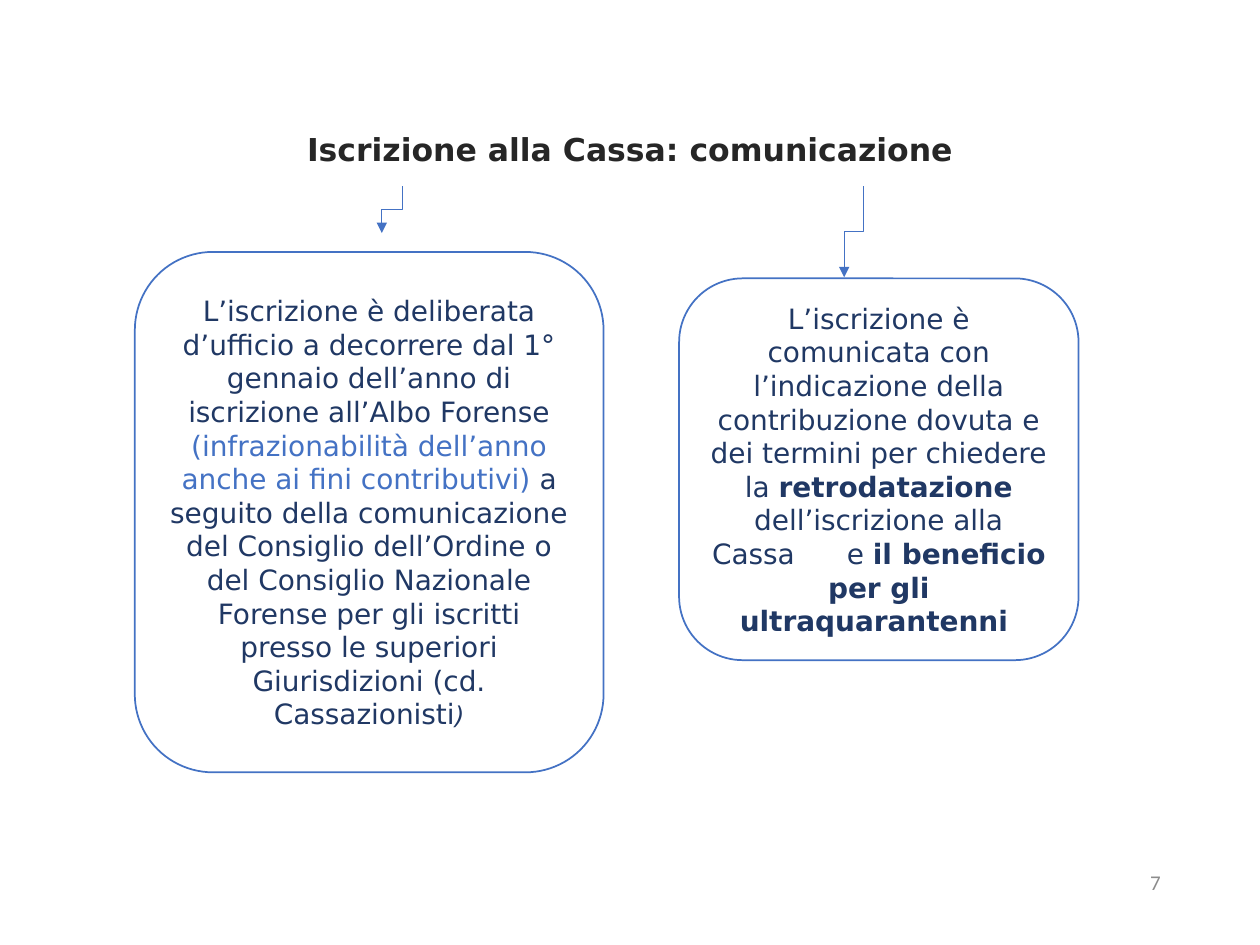
from lxml.etree import SubElement
from pptx import Presentation
from pptx.dml.color import RGBColor
from pptx.enum.shapes import MSO_CONNECTOR as Link, MSO_SHAPE as Shape
from pptx.enum.text import MSO_ANCHOR as Anchor, MSO_AUTO_SIZE as Auto, PP_ALIGN as Align
from pptx.oxml.ns import qn
from pptx.util import Inches, Pt

COLORS = {"title": "262626", "navy": "203864", "blue": "4472C4",
          "white": "FFFFFF", "gray": "8C8C8C"}
FONT = "DejaVu Sans"
TITLE = "Iscrizione alla Cassa: comunicazione"
PAGE = "7"

# Each box: place, then runs as (text, changes from the plain style)
BOXES = [
    ((1.07, 2, 3.72, 4.13), [
        ("L’iscrizione è deliberata d’ufficio a decorrere dal 1° gennaio "
         "dell’anno di iscrizione all’Albo Forense ", {}),
        ("(infrazionabilità dell’anno anche ai fini contributivi) ", {"color": "blue"}),
        ("a seguito della comunicazione del Consiglio dell’Ordine o del Consiglio "
         "Nazionale Forense per gli iscritti presso le superiori Giurisdizioni "
         "(cd. Cassazionisti", {}),
        (")", {"size": 14, "italic": True}),
    ]),
    ((5.39, 2.21, 3.17, 3.03), [
        ("L’iscrizione è comunicata con l’indicazione della contribuzione dovuta "
         "e dei termini per chiedere la ", {}),
        ("retrodatazione ", {"bold": True}),
        ("dell’iscrizione alla Cassa \t e ", {}),
        ("il beneficio per gli ultraquarantenni ", {"bold": True}),
    ]),
]
# Arrows run down, across, then down: start and end points
ARROWS = [((3.19, 1.48), (3.03, 1.85)), ((6.85, 1.48), (6.7, 2.2))]


def rgb(name):
    return RGBColor.from_string(COLORS[name])


def style(run, color="navy", size=16, bold=False, italic=False, name=FONT):
    font = run.font
    font.name, font.size, font.bold, font.italic = name, Pt(size), bold, italic
    font.color.rgb = rgb(color)


def place(shape, box):
    shape.left, shape.top, shape.width, shape.height = map(Inches, box)


def add_title(slide):
    title = slide.shapes.title
    place(title, (0.69, 0.79, 8.62, 1.21))
    frame = title.text_frame
    frame.text = TITLE
    frame.auto_size = Auto.NONE
    frame.vertical_anchor = Anchor.MIDDLE
    frame.margin_bottom = Inches(0.44)
    para = frame.paragraphs[0]
    para.alignment, para.line_spacing = Align.CENTER, 0.9
    style(para.runs[0], "title", 18, bold=True)


def add_arrow(slide, start, end):
    """Draw an elbow turned by 90 degrees, so that it leaves downwards."""
    (x1, y1), (x2, y2) = start, end
    mid_x, mid_y = (x1 + x2) / 2, (y1 + y2) / 2
    half_w, half_h = (y2 - y1) / 2, (x1 - x2) / 2
    arrow = slide.shapes.add_connector(
        Link.ELBOW, *map(Inches, (mid_x - half_w, mid_y - half_h,
                                  mid_x + half_w, mid_y + half_h)))
    arrow.line.color.rgb = rgb("blue")
    arrow.line.width = Pt(0.5)
    props = arrow.element.spPr
    props.find(qn("a:xfrm")).set("rot", str(90 * 60000))
    SubElement(arrow.line._get_or_add_ln(), qn("a:tailEnd"), type="triangle")
    SubElement(props, qn("a:effectLst"))


def add_box(slide, box, runs):
    shape = slide.shapes.add_shape(Shape.ROUNDED_RECTANGLE, *map(Inches, box))
    shape.shadow.inherit = False
    shape.fill.solid()
    shape.fill.fore_color.rgb = rgb("white")
    shape.line.color.rgb = rgb("blue")
    shape.line.width = Pt(1)
    frame = shape.text_frame
    frame.word_wrap = True
    frame.vertical_anchor = Anchor.MIDDLE
    para = frame.paragraphs[0]
    para.alignment = Align.CENTER
    for text, look in runs:
        run = para.add_run()
        run.text = text
        style(run, **look)


def add_page(slide):
    frame = slide.shapes.add_textbox(*map(Inches, (7.06, 6.8, 2.25, 0.4))).text_frame
    frame.text = PAGE
    frame.word_wrap = True
    frame.vertical_anchor = Anchor.MIDDLE
    para = frame.paragraphs[0]
    para.alignment = Align.RIGHT
    style(para.runs[0], "gray", 12, name="Calibri")


def main():
    deck = Presentation()
    deck.slide_width, deck.slide_height = Inches(10), Inches(7.5)
    slide = deck.slides.add_slide(deck.slide_layouts[5])
    add_title(slide)
    for start, end in ARROWS:
        add_arrow(slide, start, end)
    for box, runs in BOXES:
        add_box(slide, box, runs)
    add_page(slide)
    deck.save("out.pptx")


if __name__ == "__main__":
    main()
